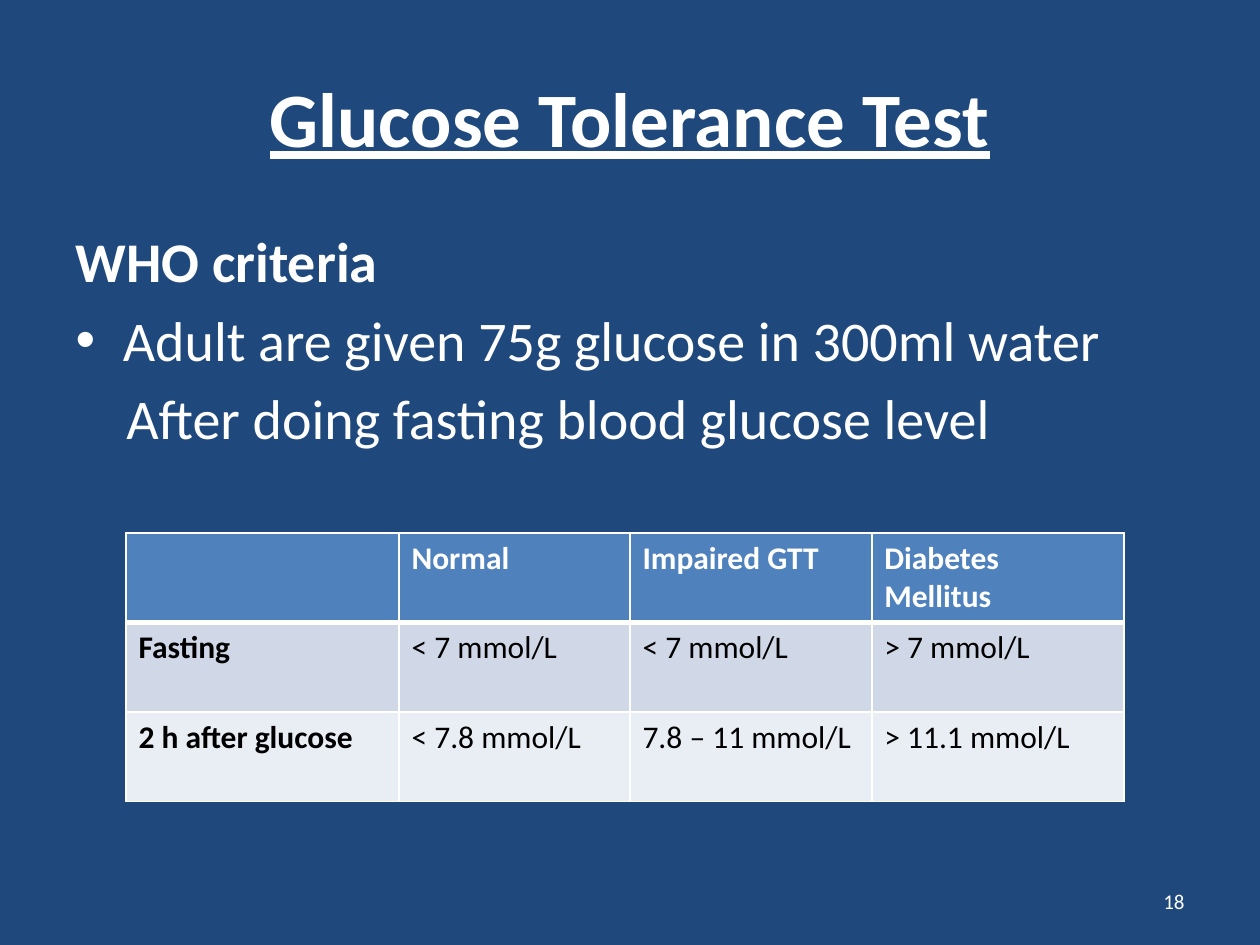
import pptx
import pptx.dml.color
import pptx.enum.text
import pptx.oxml
import pptx.oxml.ns
import pptx.util

Pt = pptx.util.Pt
ALIGN = pptx.enum.text.PP_ALIGN
ANCHOR = pptx.enum.text.MSO_ANCHOR
COLORS = {
    "background": "1F497D",
    "light": "FFFFFF",
    "dark": "000000",
    "header": "4F81BD",
    "odd": "D0D8E8",
    "even": "E9EDF4",
}
TITLE_BOX = (36, 21.6, 648, 90)
BODY_BOX = (36, 126, 648, 356.4)
NUMBER_BOX = (516, 500.4, 168, 28.8)
TABLE_BOX = (72, 304.6, 570.2, 153.3)
COLUMN_WIDTHS = (156, 132, 138.2, 144)
CRITERIA = (
    ("WHO criteria", True, 27, -27, None),
    ("Adult are given 75g glucose in 300ml water", False, 27, -27, "•"),
    ("After doing fasting blood glucose level", False, 29, 0, None),
)
ROWS = (
    ("", "Normal", "Impaired GTT", "Diabetes Mellitus"),
    ("Fasting", "< 7 mmol/L", "< 7 mmol/L", "> 7 mmol/L"),
    ("2 h after glucose", "< 7.8 mmol/L", "7.8 – 11 mmol/L", "> 11.1 mmol/L"),
)


def color(name):
    """Return the named colour."""
    return pptx.dml.color.RGBColor.from_string(COLORS[name])


def place(shape, box):
    """Move a shape into a box given in points."""
    for side, length in zip(("left", "top", "width", "height"), box):
        setattr(shape, side, Pt(length))


def add_span(para, text, shade="light", **values):
    """Add a formatted run to a paragraph."""
    span = para.add_run()
    span.text = text
    for key, value in {"name": "Calibri", **values}.items():
        setattr(span.font, key, value)
    span.font.color.rgb = color(shade)


def set_frame(frame, anchor):
    """Set wrapping, fitting and anchoring of a text frame."""
    values = {
        "word_wrap": True,
        "auto_size": pptx.enum.text.MSO_AUTO_SIZE.NONE,
        "vertical_anchor": anchor,
    }
    for key, value in values.items():
        setattr(frame, key, value)


def set_bullet(para, left, first, mark):
    """Set the indents and the bullet of a paragraph."""
    properties = para._p.get_or_add_pPr()
    properties.set("marL", str(Pt(left)))
    properties.set("indent", str(Pt(first)))
    tag = "a:buChar" if mark else "a:buNone"
    bullet = pptx.oxml.ns.qn(tag)
    element = properties.makeelement(bullet, {"char": mark} if mark else {})
    properties.append(element)


def set_borders(cell, widths):
    """Draw the four light borders of a cell."""
    properties = cell._tc.get_or_add_tcPr()
    for side, width in zip("LRTB", widths):
        properties.append(pptx.oxml.parse_xml(
            f'<a:ln{side} {pptx.oxml.ns.nsdecls("a")} w="{Pt(width)}">'
            f'<a:solidFill><a:srgbClr val="{COLORS["light"]}"/></a:solidFill>'
            f'</a:ln{side}>'
        ))


def write_title(page, box):
    """Write the underlined title."""
    title = page.shapes.title
    place(title, box)
    set_frame(title.text_frame, ANCHOR.MIDDLE)
    para = title.text_frame.paragraphs[0]
    para.alignment = ALIGN.CENTER
    add_span(para, "Glucose Tolerance Test", size=Pt(44), bold=True, underline=True)


def write_criteria(page, box):
    """Write the criteria list."""
    body = page.placeholders[1]
    place(body, box)
    frame = body.text_frame
    set_frame(frame, ANCHOR.TOP)
    for index, (text, bold, left, first, mark) in enumerate(CRITERIA):
        para = frame.add_paragraph() if index else frame.paragraphs[0]
        set_bullet(para, left, first, mark)
        add_span(para, text, size=Pt(32), bold=bold)


def write_number(page, box):
    """Write the page number."""
    number = page.shapes.add_textbox(*map(Pt, box))
    set_frame(number.text_frame, ANCHOR.MIDDLE)
    para = number.text_frame.paragraphs[0]
    para.alignment = ALIGN.RIGHT
    add_span(para, "18", size=Pt(12))


def add_results(page, box):
    """Add the table of glucose levels."""
    table = page.shapes.add_table(len(ROWS), len(COLUMN_WIDTHS), *map(Pt, box)).table
    for column, width in zip(table.columns, COLUMN_WIDTHS):
        column.width = Pt(width)
    for row_index, texts in enumerate(ROWS):
        table.rows[row_index].height = Pt(box[3] / len(ROWS))
        fill = ("header", "odd", "even")[row_index]
        shade = "dark" if row_index else "light"
        top, bottom = ((1, 3), (3, 1), (1, 1))[row_index]
        for column_index, text in enumerate(texts):
            cell = table.cell(row_index, column_index)
            set_borders(cell, (1, 1, top, bottom))
            cell.fill.solid()
            cell.fill.fore_color.rgb = color(fill)
            if text:
                bold = row_index == 0 or column_index == 0
                add_span(cell.text_frame.paragraphs[0], text, shade, size=Pt(18), bold=bold)


def main():
    """Build and save the deck."""
    deck = pptx.Presentation()
    deck.slide_width, deck.slide_height = Pt(720), Pt(540)
    page = deck.slides.add_slide(deck.slide_layouts[1])
    page.background.fill.solid()
    page.background.fill.fore_color.rgb = color("background")
    write_title(page, TITLE_BOX)
    write_criteria(page, BODY_BOX)
    write_number(page, NUMBER_BOX)
    add_results(page, TABLE_BOX)
    deck.save("out.pptx")


if __name__ == "__main__":
    main()
